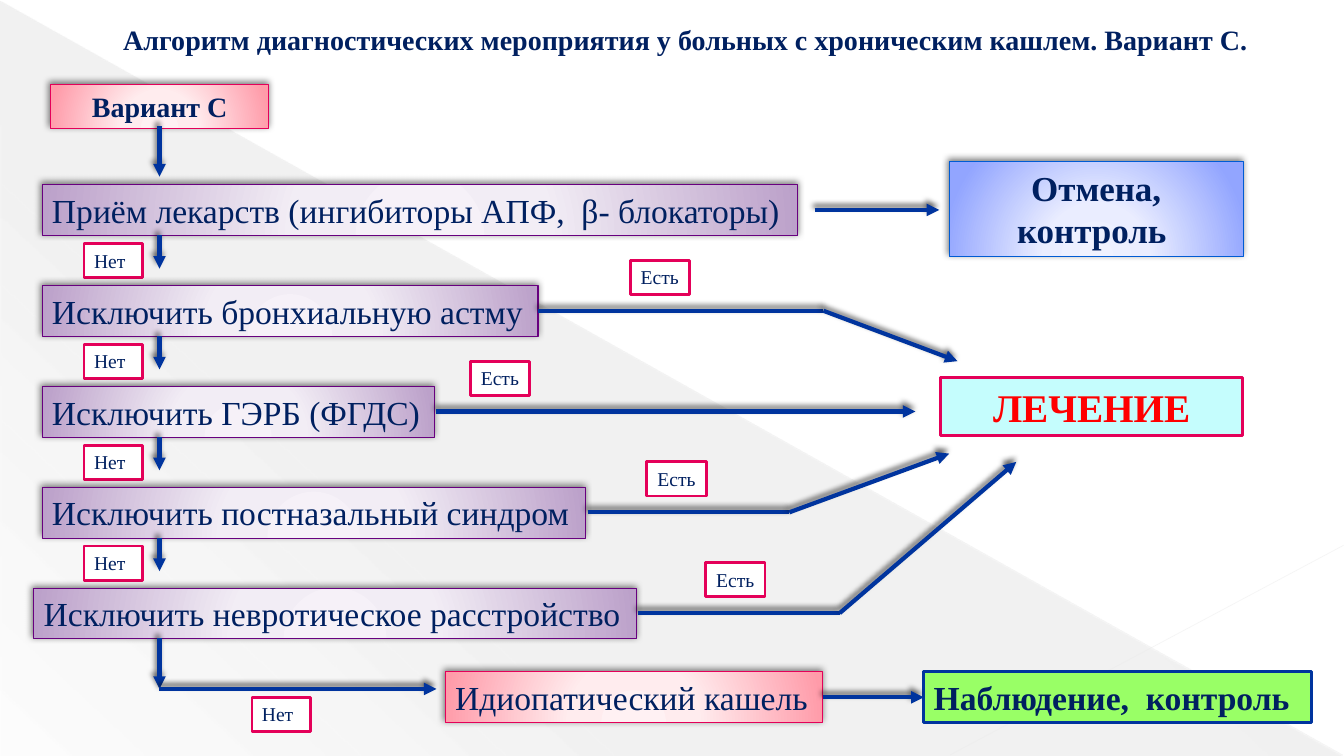
from dataclasses import dataclass
from typing import Any, Optional

from pptx import Presentation
from pptx.dml.color import RGBColor
from pptx.enum.shapes import MSO_CONNECTOR, MSO_SHAPE
from pptx.enum.text import MSO_ANCHOR, MSO_AUTO_SIZE, PP_ALIGN
from pptx.oxml import parse_xml
from pptx.oxml.ns import nsdecls, qn
from pptx.util import Cm, Pt

FONT = "Times New Roman"
NAVY, BLUE, CRIMSON, PURPLE, WHITE = "002060", "00349E", "E40059", "68007F", "FFFFFF"
PITCH = 2.54
STEM_X = 4.02
BOX_H = 1.28
RADIAL = '<a:path path="circle"><a:fillToRect l="50000" t="155000" r="50000" b="-55000"/></a:path>'
Stop = tuple[int, str, int]
Point = tuple[float, float]


@dataclass(frozen=True)
class Style:
    fill: tuple[str, ...]
    line: str
    size: float = 24
    bold: bool = False
    color: str = NAVY
    align: Any = PP_ALIGN.LEFT
    anchor: Any = MSO_ANCHOR.TOP
    wrap: bool = False


@dataclass(frozen=True)
class Box:
    text: str
    x: float
    y: float
    w: float
    h: float
    style: Style


@dataclass(frozen=True)
class Step:
    text: str
    x: float
    w: float
    yes_x: Optional[float] = None
    route: tuple[Point, ...] = ()


CENTER = {"align": PP_ALIGN.CENTER, "anchor": MSO_ANCHOR.MIDDLE, "bold": True, "wrap": True}
PINK_FILL = ("FFF1F3", "FFECEE", "FF9BA9")
TITLE = Style((), "", 20, True, NAVY, PP_ALIGN.CENTER, MSO_ANCHOR.MIDDLE)
VARIANT = Style(PINK_FILL, CRIMSON, 20, **CENTER)
STEP = Style(("F6F1F8", "F2EDF5", "BCA1CA"), PURPLE)
IDIOPATHIC = Style(PINK_FILL, CRIMSON)
CANCEL = Style(("F0F2FF", "EAEDFF", "92A5FF"), "005BD3", 25, **CENTER)
OBSERVE = Style(("99FF66",), BLUE, bold=True)
TREATMENT = Style(("C5FDFD",), CRIMSON, 28, color="FF0000", **CENTER)
NO = Style((WHITE,), CRIMSON, 14, wrap=True)
YES = Style((WHITE,), CRIMSON, 14, align=PP_ALIGN.CENTER, wrap=True)

STEPS = [
    Step("Приём лекарств (ингибиторы АПФ,  β- блокаторы)", 1.06, 19.05, None,
         ((20.53, 5.29), (23.67, 5.29))),
    Step("Исключить бронхиальную астму", 1.06, 12.5, 15.88,
         ((13.57, 7.83), (20.75, 7.83), (24.13, 9.1))),
    Step("Исключить ГЭРБ (ФГДС)", 1.06, 9.88, 11.85,
         ((11, 10.37), (23.07, 10.37))),
    Step("Исключить постназальный синдром", 1.06, 13.69, 16.3,
         ((14.81, 12.91), (19.89, 12.91), (23.92, 11.43))),
    Step("Исключить невротическое расстройство", 0.85, 15.19, 17.78,
         ((16.08, 15.45), (21.16, 15.45), (25.61, 11.64))),
]
BOXES = [
    Box("Алгоритм диагностических мероприятия у больных с хроническим кашлем. Вариант С.",
        2.74, 0.43, 29.08, 1.12, TITLE),
    Box("Вариант С", 1.27, 2.12, 5.51, 1.12, VARIANT),
    Box("Отмена, контроль ", 23.92, 4.06, 7.41, 2.4, CANCEL),
    Box("ЛЕЧЕНИЕ", 23.7, 9.52, 7.62, 1.45, TREATMENT),
    Box("Идиопатический кашель", 11.22, 16.93, 9.5, BOX_H, IDIOPATHIC),
    Box("Наблюдение,  контроль", 23.28, 16.93, 9.78, BOX_H, OBSERVE),
    Box("Нет", 6.35, 17.57, 1.48, 0.86, NO),
]
ROUTES = [
    ((STEM_X, 3.18), (STEM_X, 4.45)),
    ((STEM_X, 16.08), (STEM_X, 17.36)),
    ((STEM_X, 17.36), (11, 17.36)),
    ((20.75, 17.57), (23.28, 17.57)),
]


def rgb(value: str) -> RGBColor:
    return RGBColor.from_string(value)


def set_all(target: Any, values: dict[str, Any]) -> None:
    for name, value in values.items():
        setattr(target, name, value)


def set_gradient(sp: Any, stops: list[Stop], shade: str) -> None:
    sp.fill.gradient()
    spPr = sp._element.spPr
    gs = "".join(f'<a:gs pos="{pos * 1000}"><a:srgbClr val="{color}">'
                 f'<a:alpha val="{alpha * 1000}"/></a:srgbClr></a:gs>'
                 for pos, color, alpha in stops)
    spPr.replace(spPr.find(qn("a:gradFill")), parse_xml(
        f'<a:gradFill {nsdecls("a")} rotWithShape="1"><a:gsLst>{gs}</a:gsLst>{shade}</a:gradFill>'))


def set_effects(sp: Any, blur: float = 0, dist: float = 0, alpha: int = 0) -> None:
    shadow = (f'<a:outerShdw blurRad="{Pt(blur)}" dist="{Pt(dist)}" dir="14700000" '
              f'algn="ctr" rotWithShape="0"><a:srgbClr val="000000">'
              f'<a:alpha val="{alpha * 1000}"/></a:srgbClr></a:outerShdw>') if alpha else ""
    sp._element.spPr.append(parse_xml(f'<a:effectLst {nsdecls("a")}>{shadow}</a:effectLst>'))


def add_box(s: Any, box: Box) -> None:
    st = box.style
    frame = [Cm(v) for v in (box.x, box.y, box.w, box.h)]
    if st.fill:
        sp = s.shapes.add_shape(MSO_SHAPE.RECTANGLE, *frame)
        radial = len(st.fill) > 1
        if radial:
            set_gradient(sp, [(pos, c, 100) for pos, c in zip((0, 34, 100), st.fill)], RADIAL)
        else:
            sp.fill.solid()
            sp.fill.fore_color.rgb = rgb(st.fill[0])
        sp.line.color.rgb = rgb(st.line)
        sp.line.width = Pt(0.75 if radial else 2)
        set_effects(sp, *((5, 2, 50) if radial else ()))
    else:
        sp = s.shapes.add_textbox(*frame)
    tf = sp.text_frame
    set_all(tf, {"word_wrap": st.wrap, "vertical_anchor": st.anchor,
                 "auto_size": MSO_AUTO_SIZE.SHAPE_TO_FIT_TEXT})
    p = tf.paragraphs[0]
    p.alignment = st.align
    r = p.add_run()
    r.text = box.text
    set_all(r.font, {"name": FONT, "size": Pt(st.size), "bold": st.bold})
    r.font.color.rgb = rgb(st.color)


def add_line(s: Any, start: Point, end: Point, color: str, width: float) -> Any:
    sp = s.shapes.add_connector(MSO_CONNECTOR.STRAIGHT, *[Cm(v) for v in start + end])
    sp.line.color.rgb = rgb(color)
    sp.line.width = Pt(width)
    return sp


def add_route(s: Any, points: tuple[Point, ...]) -> None:
    for start, end in zip(points, points[1:]):
        sp = add_line(s, start, end, BLUE, 3)
        if end == points[-1]:
            sp.line._get_or_add_ln().append(
                parse_xml(f'<a:tailEnd {nsdecls("a")} type="triangle"/>'))
        set_effects(sp, 4, 3, 60)


def add_backdrop(s: Any) -> None:
    sp = s.shapes.add_shape(MSO_SHAPE.RIGHT_TRIANGLE, Cm(0.02), Cm(0.04), Cm(33.81), Cm(19))
    set_gradient(sp, [(0, "666666", 10), (70, "666666", 8), (100, "666666", 1)],
                 '<a:lin ang="7980000" scaled="0"/>')
    sp.line.fill.background()
    set_effects(sp)
    for start, end, color, width, alpha in (
            ((0, 0.03), (33.83, 19.02), "E8E8E8", 0.39, 35),
            ((33.86, 13.74), (23.95, 19.02), "EAEAEA", 0.47, 45)):
        sp = add_line(s, start, end, color, width)
        clr = sp._element.spPr.find(".//" + qn("a:srgbClr"))
        clr.append(parse_xml(f'<a:alpha {nsdecls("a")} val="{alpha * 1000}"/>'))
        set_effects(sp)


def main() -> None:
    prs = Presentation()
    set_all(prs, {"slide_width": Cm(33.87), "slide_height": Cm(19.05)})
    s = prs.slides.add_slide(prs.slide_layouts[6])
    add_backdrop(s)
    for box in BOXES:
        add_box(s, box)
    for i, step in enumerate(STEPS):
        dy = i * PITCH
        add_box(s, Box(step.text, step.x, 4.66 + dy, step.w, BOX_H, STEP))
        add_route(s, step.route)
        if step.yes_x is not None:
            add_box(s, Box("Есть ", step.yes_x, 4.02 + dy, 1.5, 0.86, YES))
        if i < len(STEPS) - 1:
            add_box(s, Box("Нет", 2.12, 6.14 + dy, 1.48, 0.86, NO))
            add_route(s, ((STEM_X, 5.93 + dy), (STEM_X, 6.77 + dy)))
    for route in ROUTES:
        add_route(s, route)
    prs.save("out.pptx")


if __name__ == "__main__":
    main()
